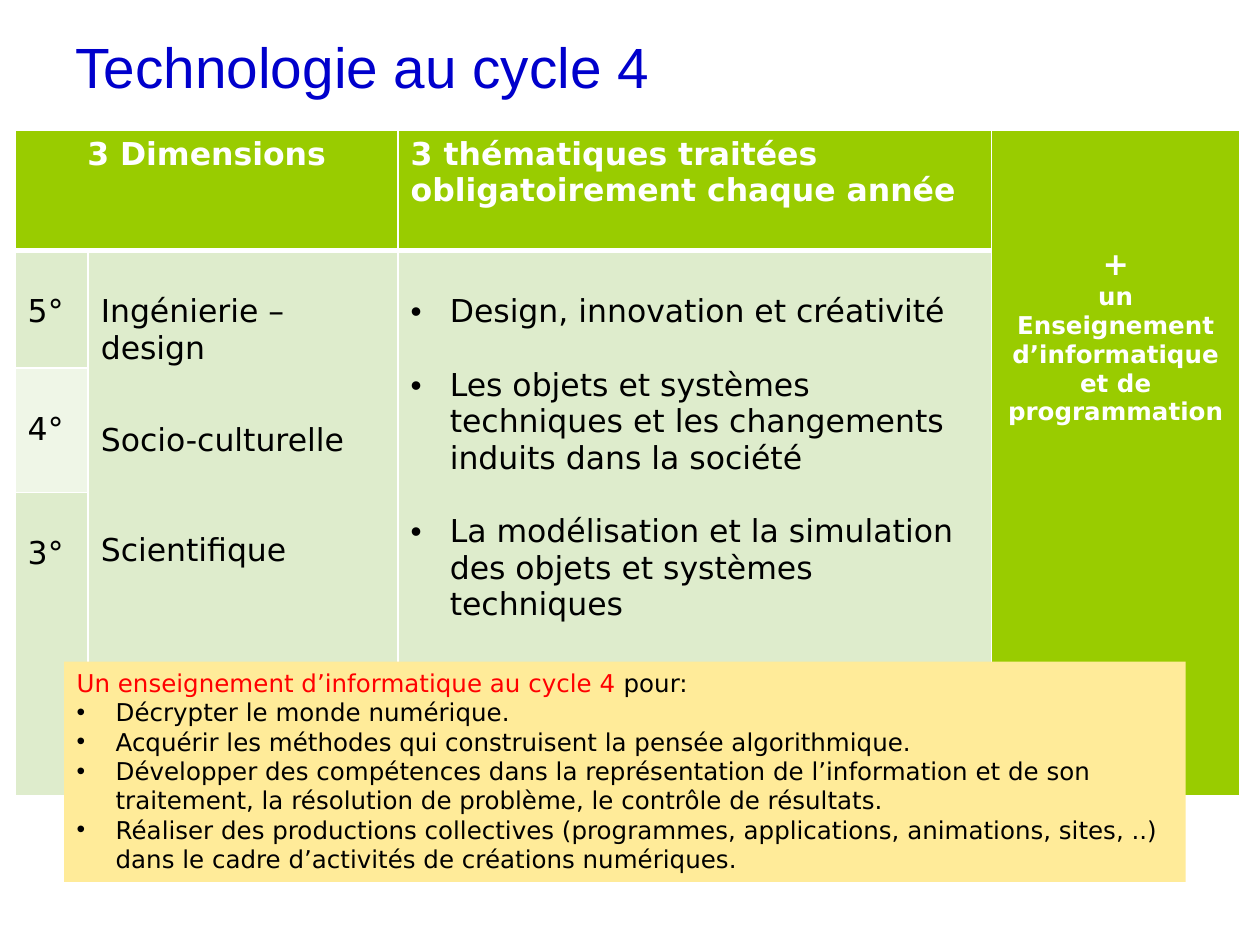
from lxml.etree import SubElement
from pptx import Presentation
from pptx.dml.color import RGBColor
from pptx.enum.shapes import MSO_SHAPE
from pptx.enum.text import MSO_ANCHOR, MSO_AUTO_SIZE as Fit, PP_ALIGN as Align
from pptx.oxml.ns import qn
from pptx.util import Inches, Pt

HUES = {"title": "0000CC", "head": "99CC00", "pale": "DEECCC", "light": "EFF6E7",
        "note": "FFEB99", "key": "FF0000", "ink": "000000", "white": "FFFFFF"}
COLS = [0.58, 2.46, 4.71, 1.97]
ROWS = [0.96, 0.93, 0.99, 2.4]
INSET = 0.05
LINE = 21  # height in points of one 18 pt line
DROP = INSET + LINE / 72

THEMES = ["Design, innovation et créativité",
          "Les objets et systèmes techniques et les changements induits dans la société",
          "La modélisation et la simulation des objets et systèmes techniques"]
EXTRA = ["+", "un", "Enseignement d’informatique", "et de", "programmation"]
GOALS = ["Décrypter le monde numérique.",
         "Acquérir les méthodes qui construisent la pensée algorithmique.",
         "Développer des compétences dans la représentation de l’information et de son "
         "traitement, la résolution de problème, le contrôle de résultats.",
         "Réaliser des productions collectives (programmes, applications, animations, "
         "sites, ..) dans le cadre d’activités de créations numériques."]


class Deck:
    def __init__(self):
        self.show = Presentation()
        self.show.slide_width, self.show.slide_height = Inches(10), Inches(7.5)
        self.slide = self.show.slides.add_slide(self.show.slide_layouts[5])
        self.face = "DejaVu Sans"

    def hue(self, name):
        return RGBColor.from_string(HUES[name])

    def font(self, item, size, hue="ink", bold=False, face=None):
        font = item.font
        font.name, font.size, font.bold = face or self.face, Pt(size), bold
        font.color.rgb = self.hue(hue)

    def bullet(self, par):
        props = par._p.get_or_add_pPr()
        props.set("marL", str(Inches(0.31)))
        props.set("indent", str(-Inches(0.31)))
        SubElement(props, qn("a:buFont"), typeface="Arial")
        SubElement(props, qn("a:buChar"), char="•")

    def title(self, text):
        box = self.slide.shapes.title
        box.left, box.top = Inches(0.5), Inches(0.3)
        box.width, box.height = Inches(8.52), Inches(0.54)
        frame = box.text_frame
        frame.text = text
        frame.auto_size, frame.vertical_anchor = Fit.NONE, MSO_ANCHOR.BOTTOM
        par = frame.paragraphs[0]
        par.alignment = Align.LEFT
        self.font(par.runs[0], 32.4, "title", face="Arial")

    def table(self, left, top):
        box = self.slide.shapes.add_table(len(ROWS), len(COLS), Inches(left), Inches(top),
                                          Inches(sum(COLS)), Inches(sum(ROWS)))
        grid = box.table
        grid.first_row = grid.horz_banding = False
        for col, width in zip(grid.columns, COLS):
            col.width = Inches(width)
        for row, height in zip(grid.rows, ROWS):
            row.height = Inches(height)
        for r in range(len(ROWS)):
            for c in range(len(COLS)):
                cell = grid.cell(r, c)
                self.edges(cell, 3 if r == 0 and c < 3 else 1)
                hue = "head" if r == 0 or c == 3 else "light" if r == 2 and c == 0 else "pale"
                cell.fill.solid()
                cell.fill.fore_color.rgb = self.hue(hue)
        return grid

    def edges(self, cell, base):
        props = cell._tc.get_or_add_tcPr()
        for tag, width in zip(("lnL", "lnR", "lnT", "lnB"), (1, 1, 1, base)):
            line = SubElement(props, qn(f"a:{tag}"), w=str(Pt(width)))
            fill = SubElement(line, qn("a:solidFill"))
            SubElement(fill, qn("a:srgbClr"), val=HUES["white"])

    def label(self, cell, lines, top=INSET, gaps=(), sizes=(), head=False,
              align=Align.LEFT, marks=False):
        """Fill a cell; gaps and sizes override the defaults line by line."""
        cell.margin_top = Inches(top)
        cell.text_frame.text = "\n".join(lines)
        for i, par in enumerate(cell.text_frame.paragraphs):
            if marks:
                self.bullet(par)
            par.alignment = align
            if gaps and i:
                par.space_before = Pt(gaps[i - 1])
            self.font(par.runs[0], sizes[i] if sizes else 18, "white" if head else "ink", head)

    def note(self, lead, rest, items, left, top, width, height):
        box = self.slide.shapes.add_shape(MSO_SHAPE.RECTANGLE, Inches(left), Inches(top),
                                          Inches(width), Inches(height))
        box.shadow.inherit = False
        box.fill.solid()
        box.fill.fore_color.rgb = self.hue("note")
        box.line.fill.background()
        frame = box.text_frame
        frame.word_wrap, frame.vertical_anchor = True, MSO_ANCHOR.TOP
        frame.auto_size = Fit.SHAPE_TO_FIT_TEXT
        frame.text = "\n".join([lead, *items])
        first, *others = frame.paragraphs
        first.add_run().text = rest
        for par in others:
            self.bullet(par)
        for par in frame.paragraphs:
            par.alignment = Align.LEFT
            for run in par.runs:
                self.font(run, 14)
        first.runs[0].font.color.rgb = self.hue("key")


def main():
    deck = Deck()
    deck.title("Technologie au cycle 4")
    grid = deck.table(0.12, 1.03)
    cell = grid.cell
    cell(0, 0).merge(cell(0, 1))
    cell(0, 3).merge(cell(3, 3))
    for c in (1, 2):
        cell(1, c).merge(cell(3, c))
    deck.label(cell(0, 0), ["3 Dimensions"], head=True, align=Align.CENTER)
    deck.label(cell(0, 2), ["3 thématiques traitées obligatoirement chaque année"], head=True)
    deck.label(cell(0, 3), EXTRA, top=INSET + 3 * LINE / 72, sizes=[18] + [14] * 4,
               head=True, align=Align.CENTER)
    for r, year in enumerate(["5°", "4°", "3°"], 1):
        deck.label(cell(r, 0), [year], top=DROP)
    deck.label(cell(1, 1), ["Ingénierie – design", "Socio-culturelle", "Scientifique"],
               top=DROP, gaps=[1.5 * LINE, 2 * LINE])
    deck.label(cell(1, 2), THEMES, top=DROP, gaps=[LINE] * 2, marks=True)
    deck.note("Un enseignement d’informatique au cycle 4 ", "pour:", GOALS,
              0.51, 5.25, 8.9, 1.75)
    deck.show.save("out.pptx")


if __name__ == "__main__":
    main()
